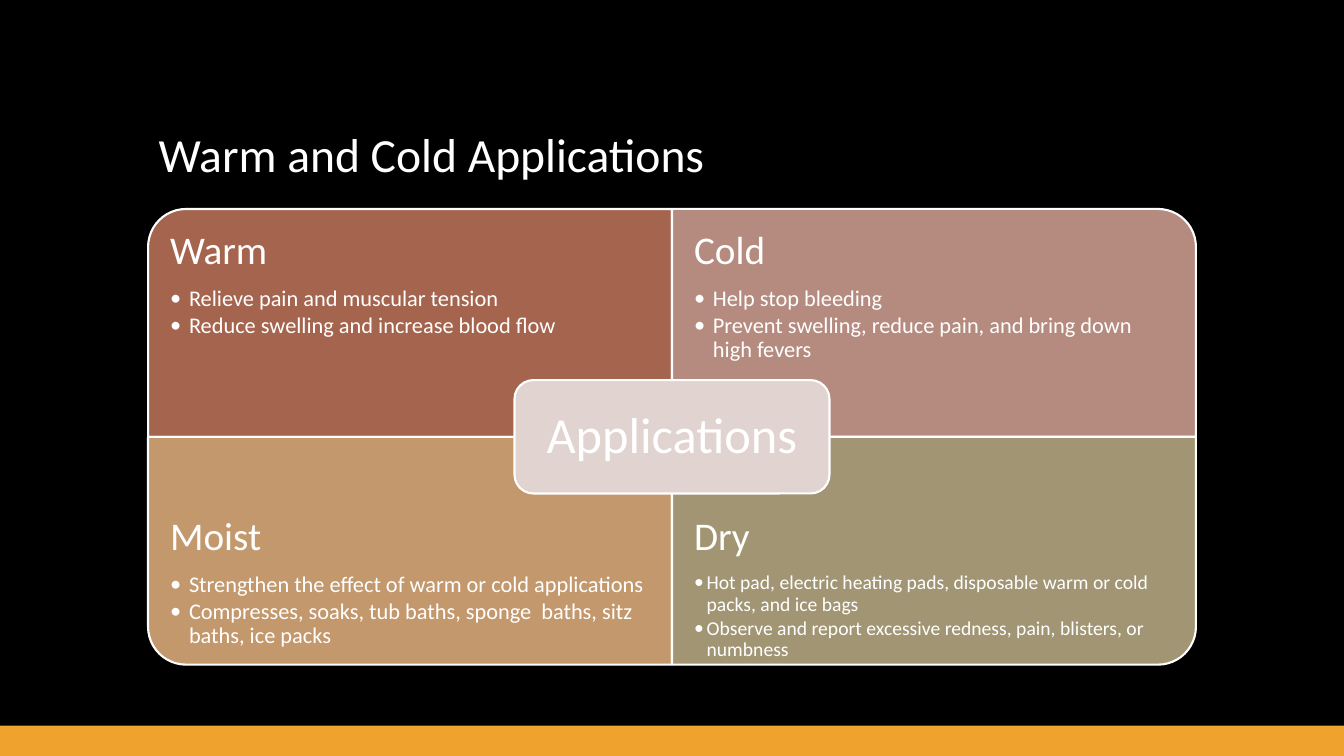
from dataclasses import dataclass

from lxml import etree
from pptx import Presentation
from pptx import util as u
from pptx.dml.color import RGBColor
from pptx.enum import shapes, text
from pptx.oxml.ns import qn

PX = 9525  # EMU per px: the slide is 1280 x 720 px


@dataclass(frozen=True)
class Theme:
    font: str = "Calibri"
    background: str = "000000"
    footer: str = "F0A22E"
    ink: str = "FFFFFF"
    hub: str = "E1D3D0"
    title_size: int = 34
    heading_size: int = 28
    hub_size: int = 36
    outline: float = 1.5


THEME = Theme()
CENTER_X, CENTER_Y = 640, 416
PANEL_W, PANEL_H = 499, 217
PANEL_TEXT_H = 162
PANEL_INSET = 21
HUB_W, HUB_H = 300, 108

# heading, column, row, turn of the rounded corner, fill, bullet size, bullet indent, bullets
PANELS = [
    ("Warm", 0, 0, 270, "A5644E", 16, 18,
     ["Relieve pain and muscular tension",
      "Reduce swelling and increase blood flow"]),
    ("Cold", 1, 0, 0, "B58B80", 16, 18,
     ["Help stop bleeding",
      "Prevent swelling, reduce pain, and bring down high fevers"]),
    ("Moist", 0, 1, 180, "C3986D", 16, 18,
     ["Strengthen the effect of warm or cold applications",
      "Compresses, soaks, tub baths, sponge  baths, sitz baths, ice packs"]),
    ("Dry", 1, 1, 90, "A19574", 14, 12,
     ["Hot pad, electric heating pads, disposable warm or cold packs, and ice bags",
      "Observe and report excessive redness, pain, blisters, or numbness"]),
]


def box(*lengths):
    return [round(length * PX) for length in lengths]


def paint(fill, color):
    fill.solid()
    fill.fore_color.rgb = RGBColor.from_string(color)


def add_block(slide, preset, left, top, width, height, color, outlined=True):
    block = slide.shapes.add_shape(preset, *box(left, top, width, height))
    block.shadow.inherit = False
    paint(block.fill, color)
    if outlined:
        paint(block.line.fill, THEME.ink)
        block.line.width = u.Pt(THEME.outline)
    else:
        block.line.fill.background()
    return block


def set_frame(frame, inset, anchor):
    frame.word_wrap = True
    frame.auto_size = text.MSO_AUTO_SIZE.NONE
    frame.vertical_anchor = anchor
    frame.margin_left = frame.margin_right = inset * PX
    frame.margin_top = frame.margin_bottom = inset * PX


def style(paragraph, size, space_after=0, align=text.PP_ALIGN.LEFT):
    paragraph.alignment = align
    paragraph.line_spacing = 0.9
    paragraph.space_before = u.Pt(0)
    paragraph.space_after = u.Pt(space_after)
    for run in paragraph.runs:
        run.font.name = THEME.font
        run.font.size = u.Pt(size)
        run.font.color.rgb = RGBColor.from_string(THEME.ink)


def set_bullet(paragraph, indent):
    paragraph.level = 1
    properties = paragraph._p.get_or_add_pPr()
    properties.set("marL", str(indent * PX))
    properties.set("indent", str(-indent * PX))
    etree.SubElement(properties, qn("a:buFont"), typeface=THEME.font)
    etree.SubElement(properties, qn("a:buChar"), char="•")


def add_title(slide, wording):
    title = slide.shapes.title
    title.left, title.top, title.width, title.height = box(141, 49, 998, 130)
    title.text_frame.text = wording
    set_frame(title.text_frame, 10, text.MSO_ANCHOR.BOTTOM)
    title.text_frame.margin_top = title.text_frame.margin_bottom = 5 * PX
    style(title.text_frame.paragraphs[0], THEME.title_size)


def add_panel(slide, heading, column, row, turn, color, size, indent, bullets):
    """Draw one quadrant with its rounded corner facing outwards, and its text."""
    left = CENTER_X - PANEL_W * (1 - column)
    top = CENTER_Y - PANEL_H * (1 - row)
    # A quarter turn swaps the sides around the same centre.
    width, height = (PANEL_H, PANEL_W) if turn % 180 else (PANEL_W, PANEL_H)
    quadrant = add_block(slide, shapes.MSO_SHAPE.ROUND_1_RECTANGLE,
                         left + (PANEL_W - width) / 2, top + (PANEL_H - height) / 2,
                         width, height, color)
    quadrant.rotation = turn

    text_top = top + row * (PANEL_H - PANEL_TEXT_H)
    frame = slide.shapes.add_textbox(
        *box(left, text_top, PANEL_W, PANEL_TEXT_H)).text_frame
    set_frame(frame, PANEL_INSET, text.MSO_ANCHOR.TOP)
    frame.text = heading
    style(frame.paragraphs[0], THEME.heading_size, space_after=10)
    for bullet in bullets:
        paragraph = frame.add_paragraph()
        paragraph.text = bullet
        style(paragraph, size, space_after=2)
        set_bullet(paragraph, indent)


def add_hub(slide, wording):
    hub = add_block(slide, shapes.MSO_SHAPE.ROUNDED_RECTANGLE,
                    CENTER_X - HUB_W / 2, CENTER_Y - HUB_H / 2, HUB_W, HUB_H, THEME.hub)
    set_frame(hub.text_frame, 14, text.MSO_ANCHOR.MIDDLE)
    hub.text_frame.text = wording
    style(hub.text_frame.paragraphs[0], THEME.hub_size, align=text.PP_ALIGN.CENTER)


def main():
    deck = Presentation()
    deck.slide_width, deck.slide_height = box(1280, 720)
    slide = deck.slides.add_slide(deck.slide_layouts[5])
    paint(slide.background.fill, THEME.background)
    add_block(slide, shapes.MSO_SHAPE.RECTANGLE, 0, 691, 1280, 29, THEME.footer,
              outlined=False)
    add_title(slide, "Warm and Cold Applications")
    for panel in PANELS:
        add_panel(slide, *panel)
    add_hub(slide, "Applications")
    deck.save("out.pptx")


if __name__ == "__main__":
    main()
